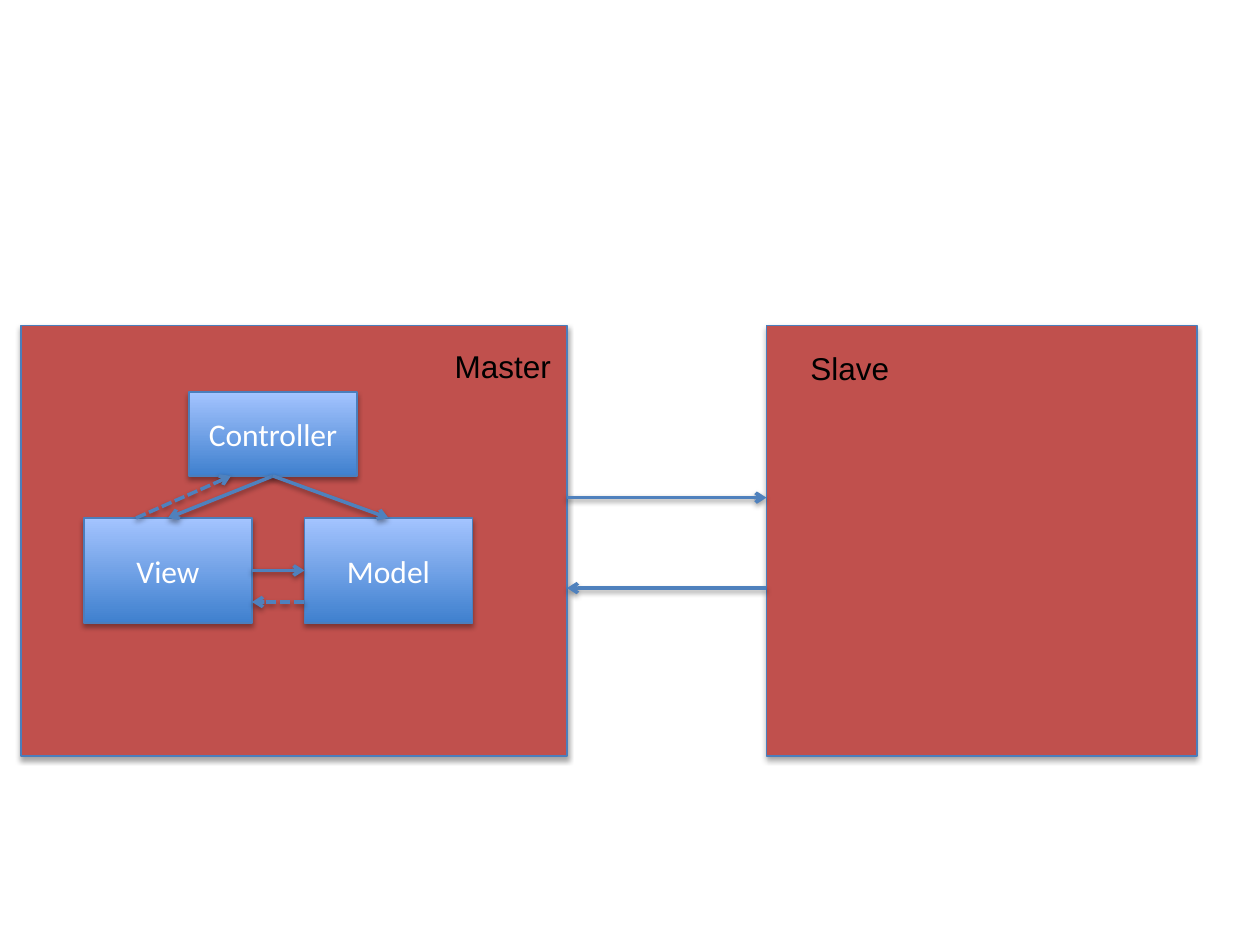
from pptx import Presentation
from pptx import util as u
from pptx.dml.color import RGBColor
from pptx.enum import dml, shapes, text
from pptx.oxml import parse_xml
from pptx.oxml.ns import nsdecls, qn

THEME = {
    "panel": "C0504D", "outline": "4B7EBC", "arrow": "4F81BD",
    "box_bottom": "3F80CE", "box_top": "A4C4FF",
    "box_text": "FFFFFF", "label_text": "000000",
    "box_font": "Calibri", "label_font": "Arial", "size": 18,
    "outline_width": 0.75, "arrow_width": 2,
}
SHAPE_SHADOW = {"opacity": 35, "distance": 1.8}
ARROW_SHADOW = {"opacity": 38, "distance": 1.6}

# left, top, width, height in points
MASTER = (12, 186, 312, 246)
SLAVE = (438, 186, 246, 246)
BOXES = {
    "Controller": (108, 224, 96, 48),
    "Model": (174, 296, 96, 60),
    "View": (48, 296, 96, 60),
}
LABELS = {"Slave": (456, 196, 60, 29), "Master": (252.7, 195, 70, 29)}


def anchor(box, across, down):
    """Point at the given fractions of a box's width and height."""
    left, top, width, height = box
    return left + across * width, top + down * height


CONTROLLER, MODEL, VIEW = BOXES.values()
# start, end, dashed
MVC_ARROWS = [
    (anchor(CONTROLLER, 0.5, 1), anchor(VIEW, 0.5, 0), False),
    (anchor(CONTROLLER, 0.5, 1), anchor(MODEL, 0.5, 0), False),
    (anchor(VIEW, 1, 0.5), anchor(MODEL, 0, 0.5), False),
    (anchor(MODEL, 0, 0.8), anchor(VIEW, 1, 0.8), True),
    (anchor(VIEW, 0.31, 0), anchor(CONTROLLER, 0.25, 1), True),
]
LINK_ARROWS = [
    (anchor(MASTER, 1, 0.4), anchor(SLAVE, 0, 0.4), False),
    (anchor(SLAVE, 0, 0.61), anchor(MASTER, 1, 0.61), False),
]


def color(name):
    return RGBColor.from_string(THEME[name])


def points(values):
    return [u.Pt(value) for value in values]


def add_shadow(shape, opacity, distance):
    shape._element.spPr.append(parse_xml(
        f'<a:effectLst {nsdecls("a")}><a:outerShdw blurRad="{u.Pt(3.1)}" '
        f'dist="{u.Pt(distance)}" dir="5400000" rotWithShape="0">'
        f'<a:srgbClr val="000000"><a:alpha val="{opacity * 1000}"/>'
        '</a:srgbClr></a:outerShdw></a:effectLst>'))


def add_rectangle(parent, bounds):
    shape = parent.add_shape(shapes.MSO_SHAPE.RECTANGLE, *points(bounds))
    shape.fill.solid()
    shape.fill.fore_color.rgb = color("panel")
    shape.line.color.rgb = color("outline")
    shape.line.width = u.Pt(THEME["outline_width"])
    add_shadow(shape, **SHAPE_SHADOW)
    return shape


def write(shape, wording, kind):
    paragraph = shape.text_frame.paragraphs[0]
    paragraph.text = wording
    font = paragraph.runs[0].font
    font.name = THEME[f"{kind}_font"]
    font.size = u.Pt(THEME["size"])
    font.color.rgb = color(f"{kind}_text")
    return paragraph


def add_box(parent, wording, bounds):
    shape = add_rectangle(parent, bounds)
    shape.fill.gradient()
    shape.fill.gradient_angle = 90
    for stop, name in zip(shape.fill.gradient_stops, ("box_bottom", "box_top")):
        stop.color.rgb = color(name)
    shape.text_frame.vertical_anchor = text.MSO_ANCHOR.MIDDLE
    write(shape, wording, "box").alignment = text.PP_ALIGN.CENTER


def add_label(parent, wording):
    label = parent.add_textbox(*points(LABELS[wording]))
    label.text_frame.word_wrap = False
    label.text_frame.auto_size = text.MSO_AUTO_SIZE.SHAPE_TO_FIT_TEXT
    write(label, wording, "label")


def add_arrow(parent, start, end, dashed):
    arrow = parent.add_connector(
        shapes.MSO_CONNECTOR.STRAIGHT, *points(start + end))
    arrow.line.color.rgb = color("arrow")
    arrow.line.width = u.Pt(THEME["arrow_width"])
    if dashed:
        arrow.line.dash_style = dml.MSO_LINE.SQUARE_DOT
    arrow._element.spPr.find(qn("a:ln")).append(
        parse_xml(f'<a:tailEnd {nsdecls("a")} type="arrow"/>'))
    add_shadow(arrow, **ARROW_SHADOW)


def main():
    presentation = Presentation()
    presentation.slide_width, presentation.slide_height = points((720, 540))
    slide = presentation.slides.add_slide(presentation.slide_layouts[6])

    add_rectangle(slide.shapes, MASTER)
    for wording, bounds in BOXES.items():
        add_box(slide.shapes, wording, bounds)
    for arrow in MVC_ARROWS:
        add_arrow(slide.shapes, *arrow)

    slave_group = slide.shapes.add_group_shape()
    add_rectangle(slave_group.shapes, SLAVE)
    add_label(slave_group.shapes, "Slave")

    add_label(slide.shapes, "Master")
    for arrow in LINK_ARROWS:
        add_arrow(slide.shapes, *arrow)
    presentation.save("out.pptx")


if __name__ == "__main__":
    main()
